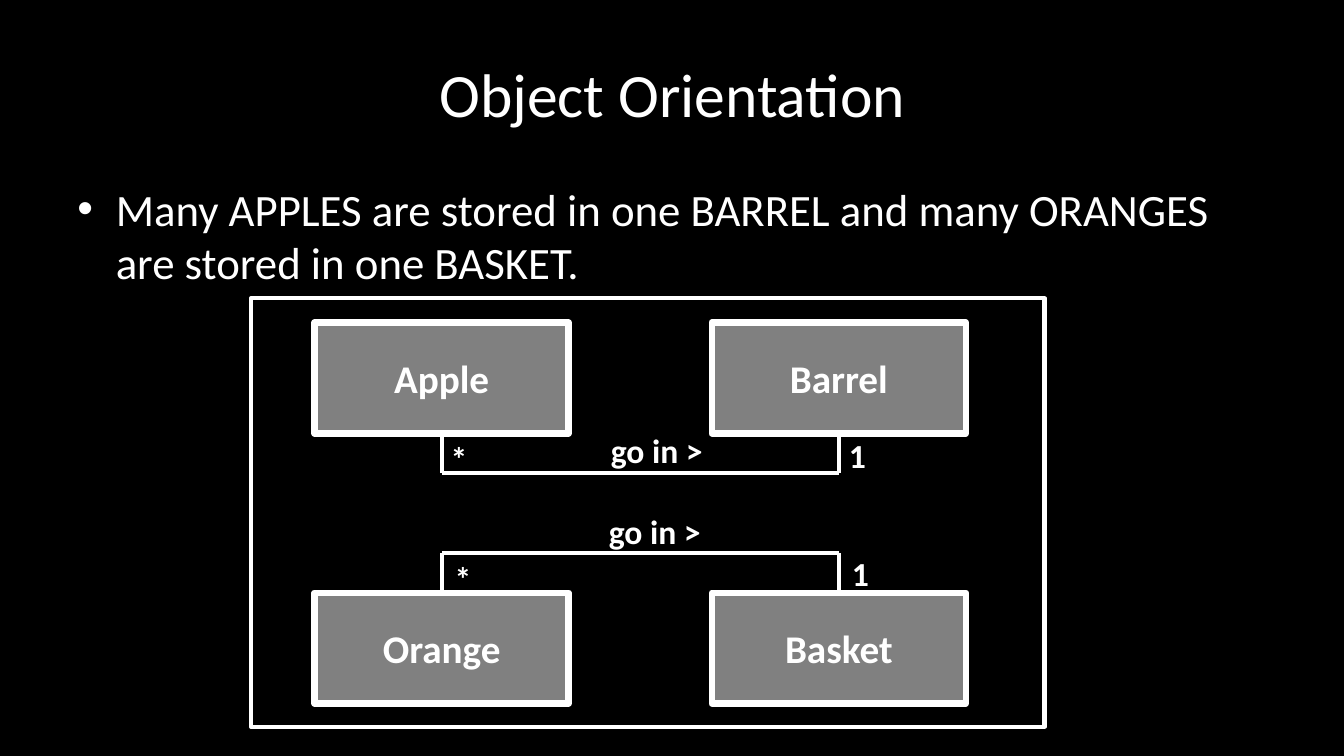
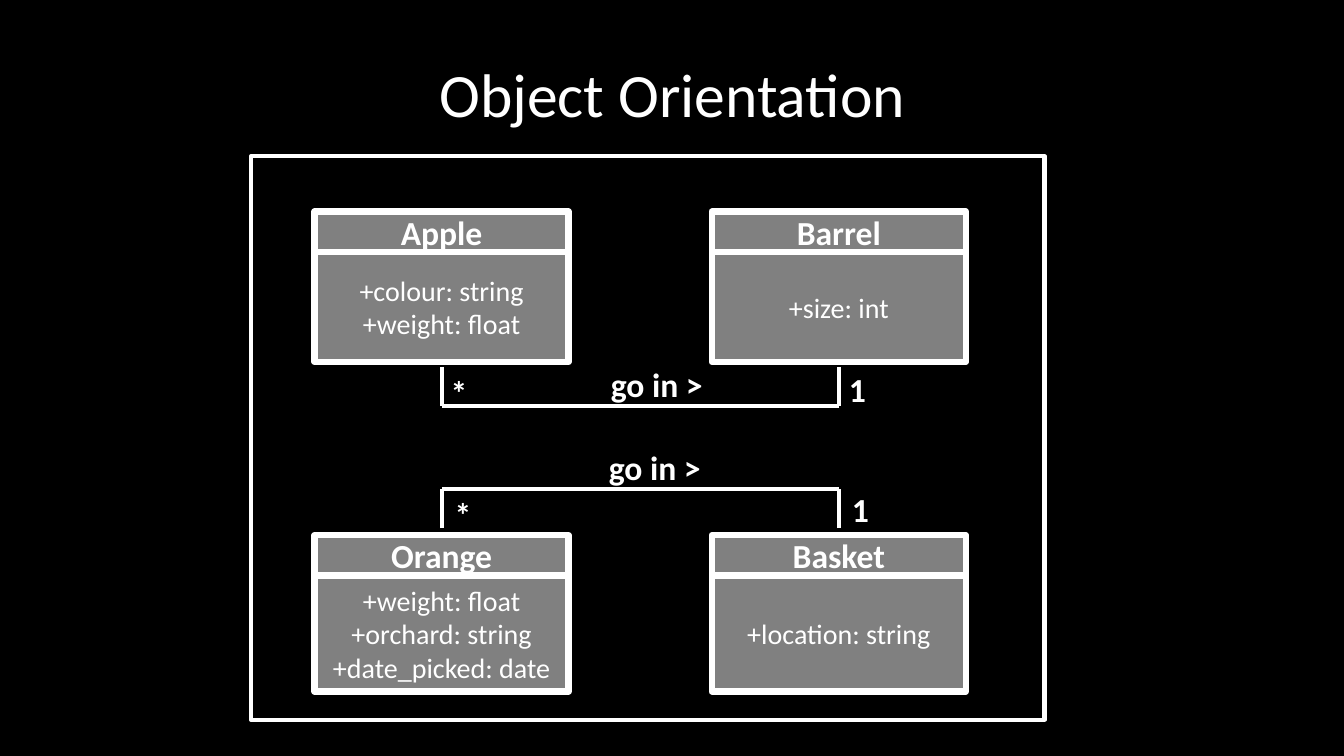
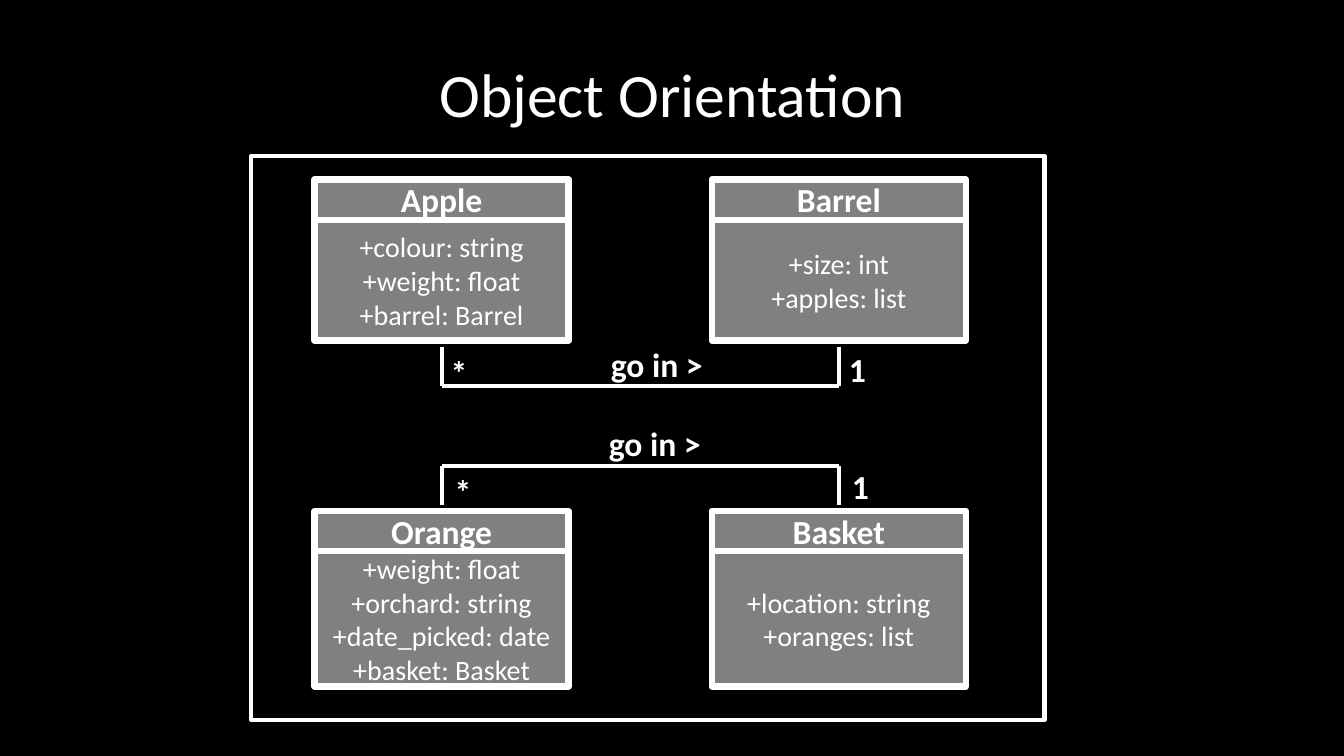
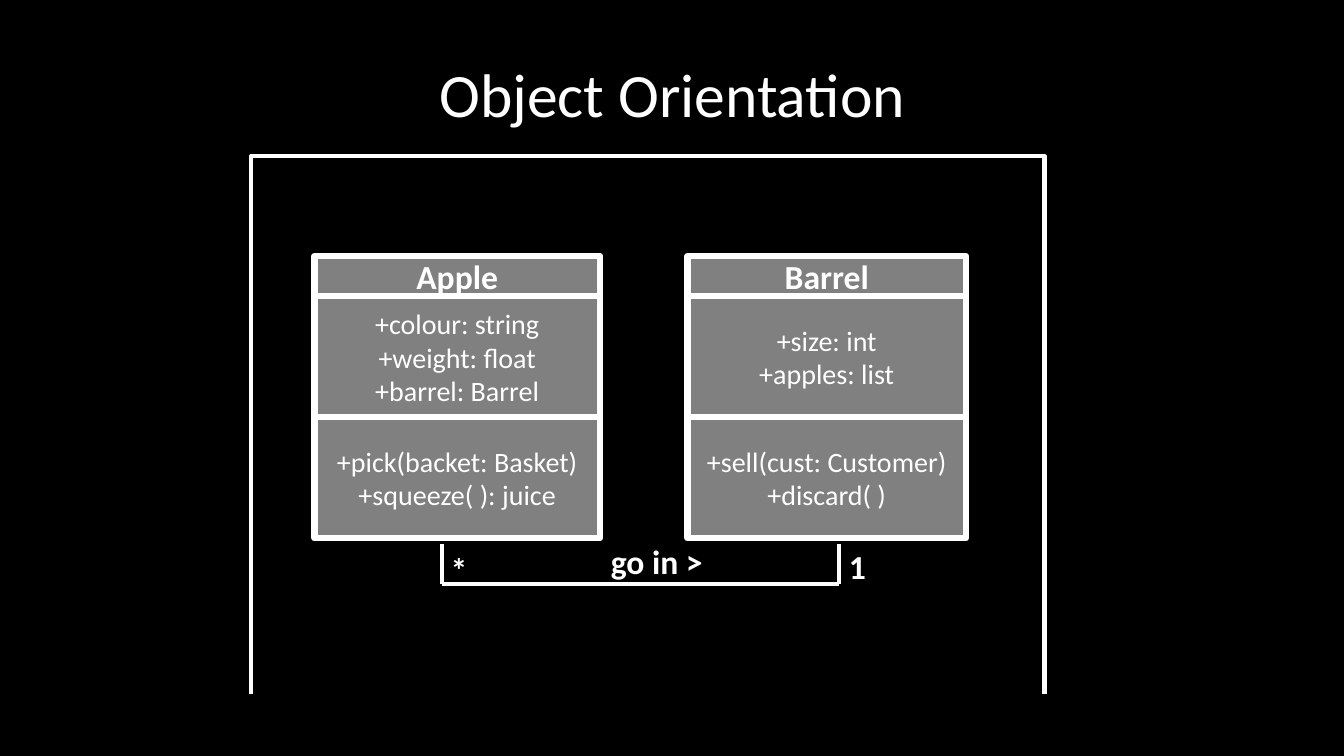
from lxml import etree
from pptx import Presentation
from pptx.dml.color import RGBColor
from pptx.enum.shapes import MSO_CONNECTOR as Connector, MSO_SHAPE as Preset
from pptx.enum.text import MSO_ANCHOR as Anchor, MSO_AUTO_SIZE as AutoSize, PP_ALIGN as Align
from pptx.oxml.ns import qn
from pptx.util import Inches, Pt

BLACK, WHITE, GREY = "000000", "FFFFFF", "808080"
FONT = "Calibri"
COLUMNS = (3.12, 7.06)
CLASS_WIDTH = 2.52
STEMS = [left + CLASS_WIDTH / 2 for left in COLUMNS]
STEM_LENGTH = 0.39
NAME_HEIGHT = 0.4
FRAME_LEFT, FRAME_WIDTH = 2.49, 7.87
FRAME = (FRAME_LEFT, 1.55, FRAME_WIDTH, 5.59)


def color(hex_string):
    """Return the colour for a hex string."""
    return RGBColor.from_string(hex_string)


def set_line(item, width):
    """Give a shape or connector a white line."""
    item.line.color.rgb = color(WHITE)
    item.line.width = Pt(width)


def write(shape, lines, size=24, bold=False, align=Align.LEFT, anchor=Anchor.TOP,
          wrap=True, bullet=None):
    """Write one paragraph per line into a shape."""
    frame = shape.text_frame
    frame.word_wrap = wrap
    frame.vertical_anchor = anchor
    frame.auto_size = AutoSize.NONE if wrap else AutoSize.SHAPE_TO_FIT_TEXT
    for index, line in enumerate(lines):
        paragraph = frame.add_paragraph() if index else frame.paragraphs[0]
        if bullet:
            properties = paragraph._p.get_or_add_pPr()
            properties.set("marL", str(Inches(0.38)))
            properties.set("indent", str(Inches(-0.38)))
            etree.SubElement(properties, qn("a:buFont")).set("typeface", "Arial")
            etree.SubElement(properties, qn("a:buChar")).set("char", bullet)
        paragraph.alignment = align
        run = paragraph.add_run()
        run.text = line
        run.font.name = FONT
        run.font.size = Pt(size)
        run.font.bold = bold
        run.font.color.rgb = color(WHITE)


def add_text(slide, box, text, **style):
    """Add a text box holding one paragraph."""
    shape = slide.shapes.add_textbox(*map(Inches, box))
    write(shape, [text], **style)


def add_box(slide, box, fill=None, line_width=3.0):
    """Add a white-edged rectangle, empty unless a fill is given."""
    shape = slide.shapes.add_shape(Preset.RECTANGLE, *map(Inches, box))
    shape.shadow.inherit = False
    if fill:
        shape.fill.solid()
        shape.fill.fore_color.rgb = color(fill)
    else:
        shape.fill.background()
    set_line(shape, line_width)
    return shape


def add_open_frame(slide, left, top, width, height):
    """Add a frame without a bottom edge."""
    right, bottom = left + width, top + height
    builder = slide.shapes.build_freeform(Inches(left), Inches(bottom))
    corners = [(left, top), (right, top), (right, bottom)]
    builder.add_line_segments([(Inches(x), Inches(y)) for x, y in corners], close=False)
    shape = builder.convert_to_shape()
    shape.shadow.inherit = False
    shape.fill.background()
    set_line(shape, 3)


def add_line(slide, start, end):
    """Add a straight white line between two points."""
    line = slide.shapes.add_connector(Connector.STRAIGHT, *map(Inches, start + end))
    set_line(line, 3)
    etree.SubElement(line._element.spPr, qn("a:effectLst"))
    return line


def add_cell(slide, box, lines, **style):
    """Add a grey cell with centred text."""
    cell = add_box(slide, box, GREY, 4.5)
    write(cell, lines, align=Align.CENTER, anchor=Anchor.MIDDLE, **style)
    return cell


def add_class(slide, left, top, name, sections, height, width=CLASS_WIDTH):
    """Add a class: its name above member sections of equal height."""
    add_cell(slide, (left, top, width, NAME_HEIGHT), [name], bold=True)
    for index, members in enumerate(sections):
        section_top = top + NAME_HEIGHT + index * height
        add_cell(slide, (left, section_top, width, height), members, size=20)


def add_association(slide, top, below_classes, classes=()):
    """Add a many-to-one bracket below or above a pair of classes."""
    bottom = top + STEM_LENGTH
    rail, class_edge = (bottom, top) if below_classes else (top, bottom)
    add_line(slide, (STEMS[1], rail), (STEMS[0], rail))
    stems = [add_line(slide, (x, class_edge), (x, rail)) for x in STEMS]
    for stem, shape in zip(stems, classes):
        stem.begin_connect(shape, 2 if below_classes else 0)
    if below_classes:
        labels = [("*", 4.37, 0, 0.37), ("1", 8.32, -0.03, 0.37), ("go in >", 5.96, -0.08, 1.12)]
    else:
        labels = [("*", 4.41, 0, 0.37), ("1", 8.35, -0.05, 0.37), ("go in >", 5.94, -0.47, 1.12)]
    for text, left, offset, width in labels:
        add_text(slide, (left, top + offset, width, 0.5), text, bold=True, wrap=False)


def add_titled_slide(presentation):
    """Add a blank slide with the shared title."""
    slide = presentation.slides.add_slide(presentation.slide_layouts[6])
    add_text(slide, (0.67, 0.3, 12, 1.25), "Object Orientation", size=44,
             align=Align.CENTER, anchor=Anchor.MIDDLE)
    return slide


def add_overview_slide(presentation):
    """Add the slide that states the example and names its classes."""
    slide = add_titled_slide(presentation)
    add_text(slide, (0.67, 1.75, 12, 4.95),
             "Many APPLES are stored in one BARREL and many ORANGES are stored in one BASKET.",
             size=32, bullet="•")
    add_box(slide, (FRAME_LEFT, 2.96, FRAME_WIDTH, 4.25))
    rows = [(3.2, ("Apple", "Barrel"), 4.3, True), (5.88, ("Orange", "Basket"), 5.49, False)]
    for top, names, association_top, below_classes in rows:
        classes = [add_cell(slide, (left, top, CLASS_WIDTH, 1.1), [name], size=28, bold=True)
                   for left, name in zip(COLUMNS, names)]
        add_association(slide, association_top, below_classes, classes)


def add_attributes_slide(presentation, rows):
    """Add a slide with two rows of associated classes."""
    slide = add_titled_slide(presentation)
    add_box(slide, FRAME)
    for row, (top, height, association_top, classes) in enumerate(rows):
        add_association(slide, association_top, row == 0)
        for left, (name, members) in zip(COLUMNS, classes):
            add_class(slide, left, top, name, [members], height)


def add_methods_slide(presentation):
    """Add the slide whose classes also list methods."""
    slide = add_titled_slide(presentation)
    add_open_frame(slide, FRAME_LEFT, 1.55, FRAME_WIDTH, 5.34)
    add_association(slide, 5.4, True)
    add_class(slide, 3.12, 2.54, "Apple",
              [["+colour: string", "+weight: float", "+barrel: Barrel"],
               ["+pick(backet: Basket)", "+squeeze( ): juice"]], 1.2, 2.83)
    add_class(slide, 6.82, 2.54, "Barrel",
              [["+size: int", "+apples: list"],
               ["+sell(cust: Customer)", "+discard( )"]], 1.2, 2.76)


def main():
    """Build and save the presentation."""
    presentation = Presentation()
    presentation.slide_width, presentation.slide_height = Inches(13.33), Inches(7.5)
    background = presentation.slide_master.background.fill
    background.solid()
    background.fore_color.rgb = color(BLACK)

    apple = ["+colour: string", "+weight: float"]
    barrel = ["+size: int"]
    orange = ["+weight: float", "+orchard: string", "+date_picked: date"]
    basket = ["+location: string"]

    add_overview_slide(presentation)
    add_attributes_slide(presentation, [
        (2.1, 1.09, 3.64, [("Apple", apple), ("Barrel", barrel)]),
        (5.31, 1.15, 4.85, [("Orange", orange), ("Basket", basket)]),
    ])
    add_attributes_slide(presentation, [
        (1.78, 1.2, 3.44, [("Apple", apple + ["+barrel: Barrel"]),
                           ("Barrel", barrel + ["+apples: list"])]),
        (5.07, 1.34, 4.62, [("Orange", orange + ["+basket: Basket"]),
                            ("Basket", basket + ["+oranges: list"])]),
    ])
    add_methods_slide(presentation)
    presentation.save("out.pptx")


if __name__ == "__main__":
    main()
